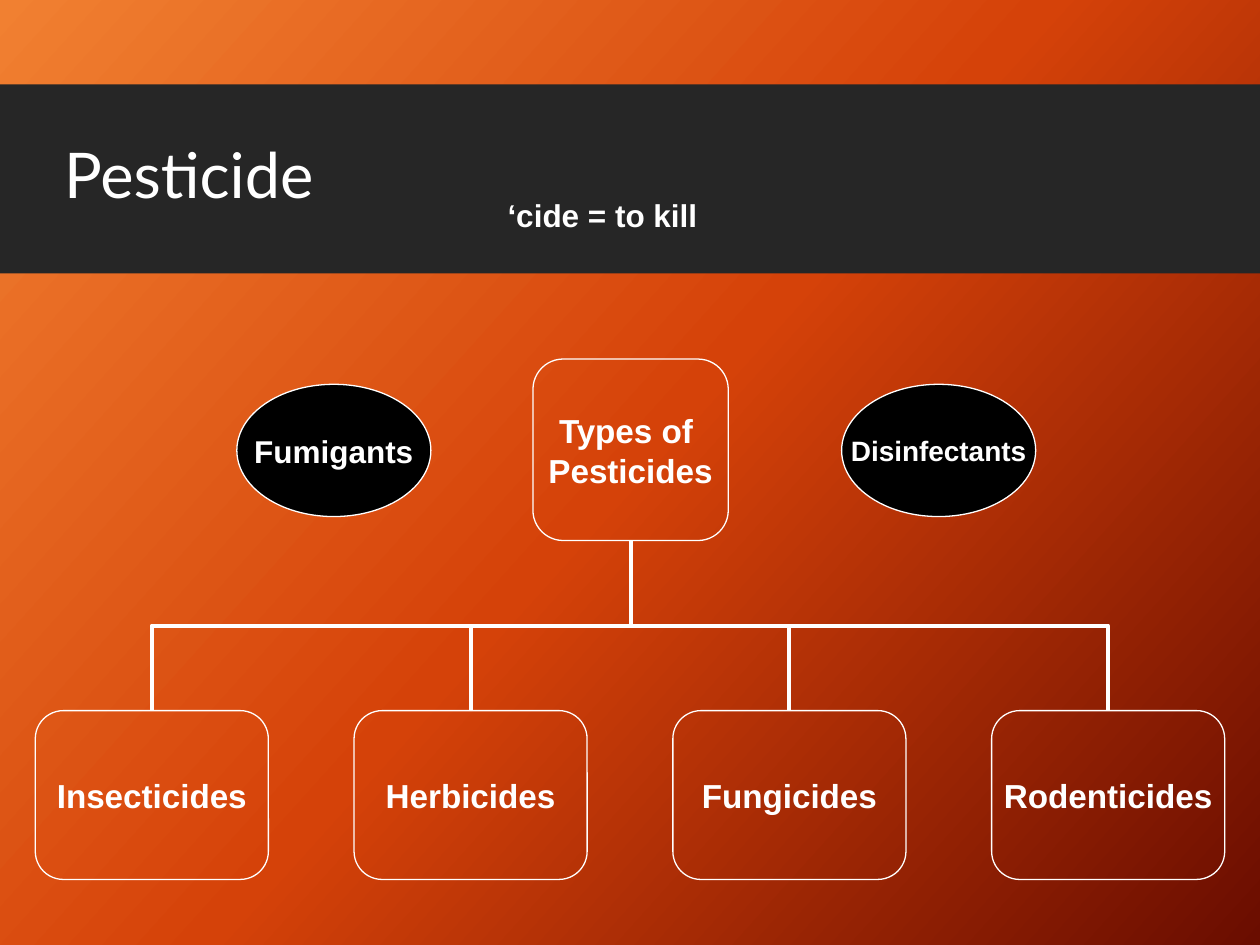
from copy import deepcopy
from typing import NamedTuple

from pptx import Presentation
from pptx import util as u
from pptx.dml.color import RGBColor
from pptx.enum import shapes, text
from pptx.oxml import ns, xmlchemy

INK = {"white": "FFFFFF", "black": "000000", "band": "262626",
       "light": "F18031", "mid": "D54209", "deep": "6A0D00"}
KIND = shapes.MSO_SHAPE


class Node(NamedTuple):
    label: str
    left: float
    top: float
    width: float
    height: float
    size: int = 19
    kind: int = KIND.ROUNDED_RECTANGLE
    fill: str = ""
    inset: tuple = (0.06, 0.03)

    @property
    def mid(self) -> float:
        return self.left + self.width / 2


def tint(name: str) -> RGBColor:
    return RGBColor.from_string(INK[name])


def style(frame, size: int, face: str = "Arial", bold: bool = True,
          align=text.PP_ALIGN.CENTER) -> None:
    for para in frame.paragraphs:
        para.alignment = align
        for run in para.runs:
            run.font.size = u.Pt(size)
            run.font.name = face
            run.font.bold = bold
            run.font.color.rgb = tint("white")


def paint(slide) -> None:
    fill = slide.background.fill
    fill.gradient()
    fill.gradient_angle = 360 - 42
    stops = slide.element.find(".//" + ns.qn("a:gsLst"))
    stops.append(deepcopy(stops[0]))
    for stop, name, place in zip(fill.gradient_stops, ("light", "mid", "deep"), (0, 0.5, 1)):
        stop.color.rgb = tint(name)
        stop.position = place


def head(slide) -> None:
    band = slide.shapes.add_shape(KIND.RECTANGLE, 0, u.Inches(0.67), u.Inches(11.41), u.Inches(1.5))
    band.shadow.inherit = False
    band.fill.solid()
    band.fill.fore_color.rgb = tint("band")
    band.line.fill.background()
    title = slide.shapes.title
    title.element.addprevious(band.element)
    title.left, title.top, title.width, title.height = map(u.Inches, (0.41, 0.79, 8.5, 1.25))
    frame = title.text_frame
    frame.text = "Pesticide"
    frame.vertical_anchor = text.MSO_ANCHOR.MIDDLE
    frame.paragraphs[0].line_spacing = 0.9
    style(frame, 36, "Lato", False, text.PP_ALIGN.LEFT)


def note(slide) -> None:
    box = slide.shapes.add_textbox(*map(u.Inches, (3.93, 1.51, 2.33, 0.4)))
    frame = box.text_frame
    frame.word_wrap = True
    frame.text = "‘cide = to kill"
    style(frame, 18, align=text.PP_ALIGN.LEFT)


def draw(slide, node: Node) -> None:
    shape = slide.shapes.add_shape(node.kind, *map(u.Inches, node[1:5]))
    shape.shadow.inherit = False
    if node.fill:
        shape.fill.solid()
        shape.fill.fore_color.rgb = tint(node.fill)
    else:
        shape.fill.background()
    shape.line.color.rgb = tint("white")
    shape.line.width = u.Pt(0.75)
    frame = shape.text_frame
    frame.text = node.label
    frame.word_wrap = False
    frame.vertical_anchor = text.MSO_ANCHOR.MIDDLE
    frame.margin_left = frame.margin_right = u.Inches(node.inset[0])
    frame.margin_top = frame.margin_bottom = u.Inches(node.inset[1])
    style(frame, node.size)


def link(slide, kid: Node, root: Node) -> None:
    base = root.top + root.height
    drop, reach = kid.top - base, abs(kid.mid - root.mid)
    side = 1 if kid.mid > root.mid else -1
    x, y = (kid.mid + root.mid) / 2, (kid.top + base) / 2
    ends = (x - side * drop / 2, y + reach / 2, x + side * drop / 2, y - reach / 2)
    line = slide.shapes.add_connector(shapes.MSO_CONNECTOR.ELBOW, *map(u.Inches, ends))
    line.line.color.rgb = tint("white")
    line.line.width = u.Pt(2.25)
    props = line.element.spPr
    props.find(ns.qn("a:xfrm")).set("rot", str((180 + side * 90) * 60000))
    props.append(xmlchemy.OxmlElement("a:effectLst"))


def main() -> None:
    deck = Presentation()
    deck.slide_width, deck.slide_height = u.Inches(10), u.Inches(7.5)
    slide = deck.slides.add_slide(deck.slide_layouts[5])
    paint(slide)
    head(slide)

    root = Node("Types of \nPesticides", 4.23, 2.85, 1.55, 1.44)
    names = ("Insecticides", "Herbicides", "Fungicides", "Rodenticides")
    kids = [Node(name, 0.28 + 2.53 * i, 5.64, 1.85, 1.34) for i, name in enumerate(names)]
    for kid in reversed(kids):
        link(slide, kid, root)
    for node in (root, *kids):
        draw(slide, node)

    note(slide)
    for name, left, size in (("Disinfectants", 6.68, 16), ("Fumigants", 1.88, 18)):
        draw(slide, Node(name, left, 3.05, 1.54, 1.05, size,
                         KIND.FLOWCHART_CONNECTOR, "black", (0.1, 0.05)))
    deck.save("out.pptx")


if __name__ == "__main__":
    main()
